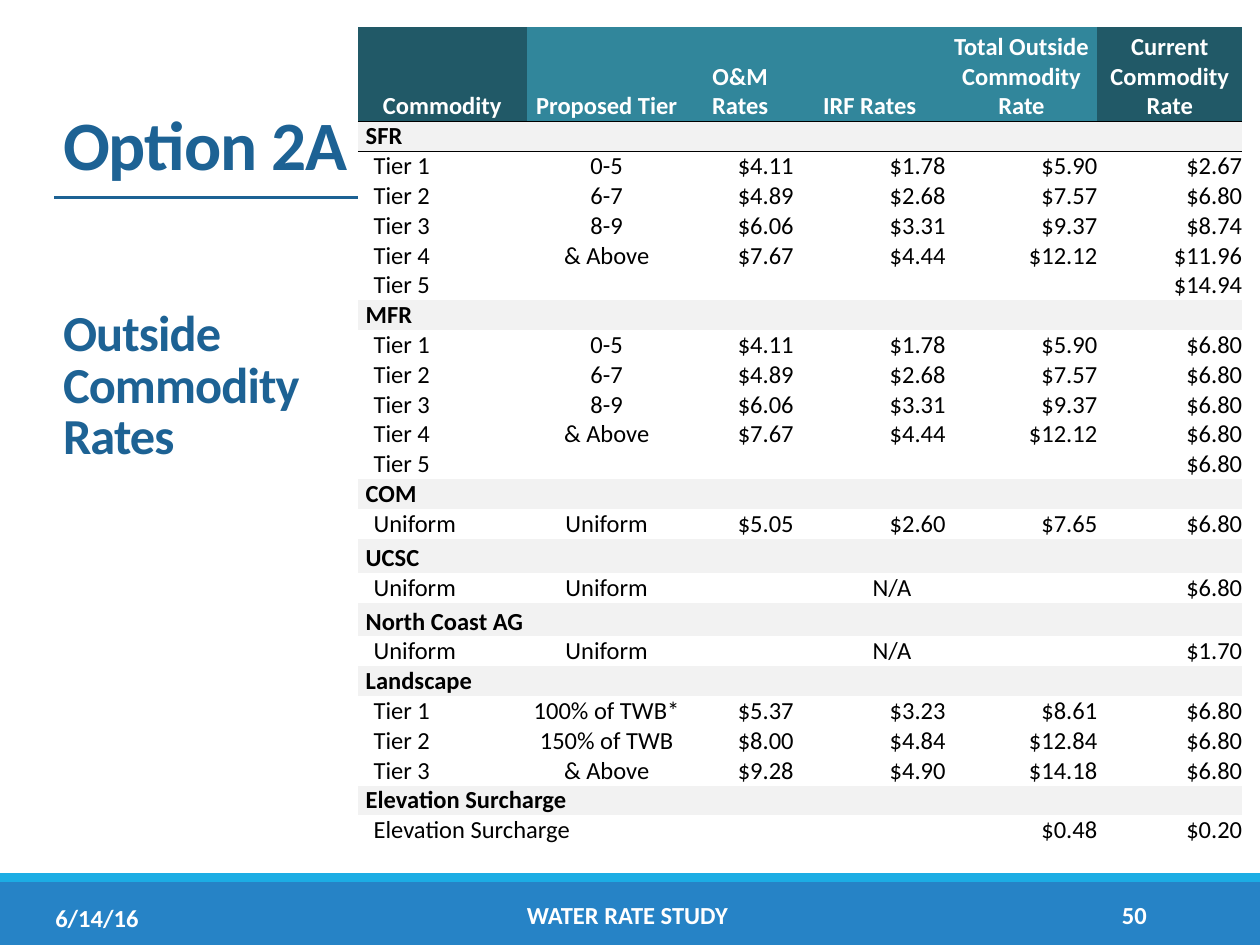
from lxml.etree import SubElement
from pptx import Presentation
from pptx.dml.color import RGBColor
from pptx.enum.shapes import MSO_CONNECTOR, MSO_SHAPE
from pptx.enum.text import MSO_ANCHOR, MSO_AUTO_SIZE, PP_ALIGN
from pptx.oxml import parse_xml
from pptx.oxml.ns import nsdecls, qn
from pptx.util import Pt

COLORS = {"title": "1D6294", "footer": "2683C6", "strip": "1CADE4",
          "head_dark": "215967", "head": "31869B", "group": "F2F2F2",
          "white": "FFFFFF", "black": "000000"}
NO_GRID_STYLE = "{2D5ABB26-0587-4C30-8999-92F81FD0307C}"
LEFT, CENTER, RIGHT = PP_ALIGN.LEFT, PP_ALIGN.CENTER, PP_ALIGN.RIGHT


def rgb(name):
    return RGBColor.from_string(COLORS[name])


def add_run(p, text, size, color, bold):
    r = p.add_run()
    r.text = text
    for attr, value in {"name": "Calibri", "size": Pt(size), "bold": bold}.items():
        setattr(r.font, attr, value)
    r.font.color.rgb = rgb(color)
    return r


prs = Presentation()
prs.slide_width, prs.slide_height = Pt(720), Pt(540)
s = prs.slides.add_slide(prs.slide_layouts[5])

# Footer bands
for color, top, height in [("footer", 504, 36), ("strip", 499, 5)]:
    sp = s.shapes.add_shape(MSO_SHAPE.RECTANGLE, 0, Pt(top), Pt(720), Pt(height))
    sp.shadow.inherit = False
    sp.fill.solid()
    sp.fill.fore_color.rgb = rgb(color)
    sp.line.fill.background()

# Rule under the title
rule = s.shapes.add_connector(MSO_CONNECTOR.STRAIGHT, Pt(31), Pt(113), Pt(688), Pt(113))
rule.line.color.rgb = rgb("title")
rule.line.width = Pt(1.5)
SubElement(rule._element.spPr, qn("a:effectLst"))

# Title and subtitle
title = s.shapes.title
title.left, title.top, title.width, title.height = Pt(28.8), Pt(28.8), Pt(185.8), Pt(240.5)
tf = title.text_frame
for attr, value in {"word_wrap": True, "auto_size": MSO_AUTO_SIZE.NONE,
                    "vertical_anchor": MSO_ANCHOR.BOTTOM}.items():
    setattr(tf, attr, value)
for i, (text, size, gap) in enumerate([("Option 2A", 39.6, 0),
                                       ("Outside Commodity Rates", 28.8, 72)]):
    p = tf.add_paragraph() if i else tf.paragraphs[0]
    for attr, value in {"alignment": LEFT, "line_spacing": 0.85,
                        "space_before": Pt(gap)}.items():
        setattr(p, attr, value)
    r = add_run(p, text, size, "title", True)
    r.font._element.set("spc", "-50")

# Footer texts
for text, left, top, width, align in [("WATER RATE STUDY", 104.4, 508.3, 508.3, CENTER),
                                      ("50", 612.7, 508.3, 49.7, RIGHT),
                                      ("6/14/16", 24.5, 509.8, 79.9, LEFT)]:
    tf = s.shapes.add_textbox(Pt(left), Pt(top), Pt(width), Pt(28.8)).text_frame
    tf.word_wrap = True
    tf.vertical_anchor = MSO_ANCHOR.MIDDLE
    tf.paragraphs[0].alignment = align
    add_run(tf.paragraphs[0], text, 14, "white", True)

# Rate table: a row with one entry is a group heading
tiers = [["Tier 1", "0-5", "$4.11", "$1.78", "$5.90"],
         ["Tier 2", "6-7", "$4.89", "$2.68", "$7.57"],
         ["Tier 3", "8-9", "$6.06", "$3.31", "$9.37"],
         ["Tier 4", "& Above", "$7.67", "$4.44", "$12.12"],
         ["Tier 5", "", "", "", ""]]
sfr_current = ["$2.67", "$6.80", "$8.74", "$11.96", "$14.94"]
rows = [
    ["Commodity", "Proposed Tier", "O&M\nRates", "IRF Rates",
     "Total Outside\nCommodity Rate", "Current Commodity Rate"],
    ["SFR"], *[tier + [rate] for tier, rate in zip(tiers, sfr_current)],
    ["MFR"], *[tier + ["$6.80"] for tier in tiers],
    ["COM"], ["Uniform", "Uniform", "$5.05", "$2.60", "$7.65", "$6.80"],
    ["UCSC"], ["Uniform", "Uniform", "N/A", "", "", "$6.80"],
    ["North Coast AG"], ["Uniform", "Uniform", "N/A", "", "", "$1.70"],
    ["Landscape"],
    ["Tier 1", "100% of TWB*", "$5.37", "$3.23", "$8.61", "$6.80"],
    ["Tier 2", "150% of TWB", "$8.00", "$4.84", "$12.84", "$6.80"],
    ["Tier 3", "& Above", "$9.28", "$4.90", "$14.18", "$6.80"],
    ["Elevation Surcharge"],
    ["Elevation Surcharge", "", "", "", "$0.48", "$0.20"],
]
col_widths = [96.5, 91.4, 61.2, 86.8, 86.7, 82.8]
row_heights = [54 if i == 0 else 19.4 if row[0] in ("UCSC", "North Coast AG") else 17.06
               for i, row in enumerate(rows)]
frame = s.shapes.add_table(len(rows), len(col_widths), Pt(204.5), Pt(15.4),
                           Pt(sum(col_widths)), Pt(sum(row_heights)))
table = frame.table
table.first_row = table.horz_banding = False
table._tbl.tblPr.find(qn("a:tableStyleId")).text = NO_GRID_STYLE
for col, width in zip(table.columns, col_widths):
    col.width = Pt(width)

for i, (row, height) in enumerate(zip(rows, row_heights)):
    table.rows[i].height = Pt(height)
    header, group = i == 0, len(row) == 1
    for j, text in enumerate(row + [""] * (len(col_widths) - len(row))):
        cell = table.cell(i, j)
        indent = 0 if header or j else 4.5 if group else 9
        anchor = MSO_ANCHOR.MIDDLE if text == "N/A" else MSO_ANCHOR.BOTTOM
        for attr, value in {"margin_left": Pt(indent), "margin_right": 0, "margin_top": 0,
                            "margin_bottom": 0, "vertical_anchor": anchor}.items():
            setattr(cell, attr, value)
        if header:
            fill = "head_dark" if j in (0, 5) else "head"
        else:
            fill = "group" if group else "white"
        cell.fill.solid()
        cell.fill.fore_color.rgb = rgb(fill)
        if i < 2:  # black line between header and body
            side = "lnB" if header else "lnT"
            cell._tc.get_or_add_tcPr().insert(0, parse_xml(
                f'<a:{side} {nsdecls("a")} w="12700"><a:solidFill>'
                f'<a:srgbClr val="{COLORS["black"]}"/></a:solidFill></a:{side}>'))
        if header or j == 1 or text == "N/A":
            align = CENTER
        else:
            align = RIGHT if j else LEFT
        for k, line in enumerate(text.split("\n")):
            p = cell.text_frame.add_paragraph() if k else cell.text_frame.paragraphs[0]
            p.alignment = align
            if line:
                add_run(p, line, 14, "white" if header else "black", header or group)
            else:
                SubElement(p._p, qn("a:endParaRPr"), sz="1400")
    if "N/A" in row:
        table.cell(i, 2).merge(table.cell(i, 4))
    if row[0] == "Elevation Surcharge":
        table.cell(i, 0).merge(table.cell(i, 1))

prs.save("out.pptx")
